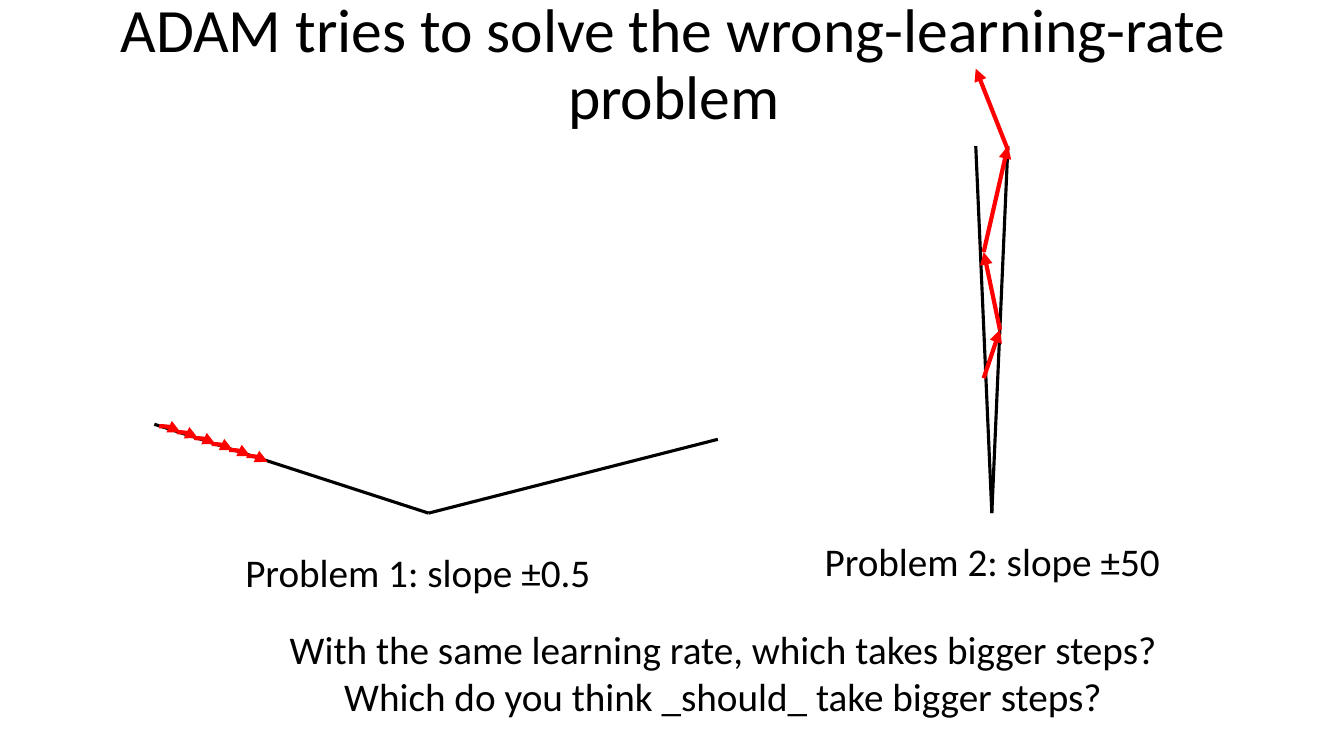
import itertools

import pptx
import pptx.dml.color
import pptx.enum.shapes
import pptx.enum.text
import pptx.oxml
import pptx.oxml.ns
import pptx.util

Cm = pptx.util.Cm
FONT = "Calibri"
BLACK = "000000"
RED = "FF0000"


def color(hex_value):
    return pptx.dml.color.RGBColor.from_string(hex_value)


def place(shape, box):
    shape.left, shape.top, shape.width, shape.height = map(Cm, box)


def write(frame, lines, size):
    """Centred paragraph with one run per line."""
    paragraph = frame.paragraphs[0]
    paragraph.alignment = pptx.enum.text.PP_ALIGN.CENTER
    for number, line in enumerate(lines):
        if number:
            paragraph.add_line_break()
        run = paragraph.add_run()
        run.text = line
        run.font.name = FONT
        run.font.size = pptx.util.Pt(size)
        run.font.color.rgb = color(BLACK)
    return paragraph


def stroke(shape, hex_value, width, arrow):
    shape.line.color.rgb = color(hex_value)
    shape.line.width = pptx.util.Pt(width)
    if arrow:
        outline = shape._element.spPr.find(pptx.oxml.ns.qn("a:ln"))
        outline.append(pptx.oxml.parse_xml(
            f'<a:tailEnd {pptx.oxml.ns.nsdecls("a")} type="triangle"/>'))


def polyline(slide, box, points, hex_value=BLACK, width=2.25, arrow=False):
    """Straight segments through points measured from the box corner."""
    left, top = box[:2]
    for (x1, y1), (x2, y2) in itertools.pairwise(points):
        segment = slide.shapes.add_connector(
            pptx.enum.shapes.MSO_CONNECTOR.STRAIGHT,
            Cm(left + x1), Cm(top + y1), Cm(left + x2), Cm(top + y2))
        stroke(segment, hex_value, width, arrow)
        segment._element.spPr.append(pptx.oxml.parse_xml(
            f'<a:effectLst {pptx.oxml.ns.nsdecls("a")}/>'))


def add_title(slide, box, text):
    title = slide.shapes.title
    place(title, box)
    frame = title.text_frame
    frame.auto_size = pptx.enum.text.MSO_AUTO_SIZE.NONE
    frame.vertical_anchor = pptx.enum.text.MSO_ANCHOR.MIDDLE
    write(frame, [text], 44).line_spacing = 0.9


def add_caption(slide, box, *lines):
    frame = slide.shapes.add_textbox(*map(Cm, box)).text_frame
    frame.word_wrap = False
    frame.auto_size = pptx.enum.text.MSO_AUTO_SIZE.SHAPE_TO_FIT_TEXT
    write(frame, lines, 28)


def add_shallow_valley(slide, box):
    left, top, width, height = box
    polyline(slide, box, [(0, 0), (6.91, height), (width, 0.38)])
    # Six small steps down the left slope
    for step in range(6):
        hop = slide.shapes.add_shape(
            pptx.enum.shapes.MSO_SHAPE.ARC,
            Cm(left - 0.41 + 0.44 * step), Cm(top + 0.05 + 0.15 * step),
            Cm(1.07), Cm(0.3))
        hop.fill.background()
        stroke(hop, RED, 3, True)
        hop.shadow.inherit = False


def add_steep_valley(slide, box):
    width, height = box[2:]
    polyline(slide, box, [(0, 0), (width / 2, height), (width, 0)])
    # Growing steps that bounce between the walls and then leave the valley
    bounces = [(0.2, 5.85), (0.61, 4.63), (0.2, 2.67), (width, 0)]
    escape = [(width, 0.1), (0, -1.95)]
    for steps in (bounces, escape):
        polyline(slide, box, steps, RED, 3, True)


def main():
    deck = pptx.Presentation()
    deck.slide_width, deck.slide_height = Cm(33.87), Cm(19.05)
    slide = deck.slides.add_slide(deck.slide_layouts.get_by_name("Title Only"))

    add_title(slide, (0.05, 0.05, 33.87, 3.23),
              "ADAM tries to solve the wrong-learning-rate problem")

    # The two problems with their captions
    add_shallow_valley(slide, (3.89, 10.69, 14.2, 2.24))
    add_caption(slide, (5.87, 13.69, 9.32, 1.45), "Problem 1: slope ±0.5")
    add_steep_valley(slide, (24.59, 3.68, 0.81, 9.25))
    add_caption(slide, (20.47, 13.41, 9.07, 1.45), "Problem 2: slope ±50")

    # Closing questions
    add_caption(slide, (6.93, 15.62, 22.58, 2.64),
                "With the same learning rate, which takes bigger steps?",
                "Which do you think _should_ take bigger steps?")

    deck.save("out.pptx")


if __name__ == "__main__":
    main()
